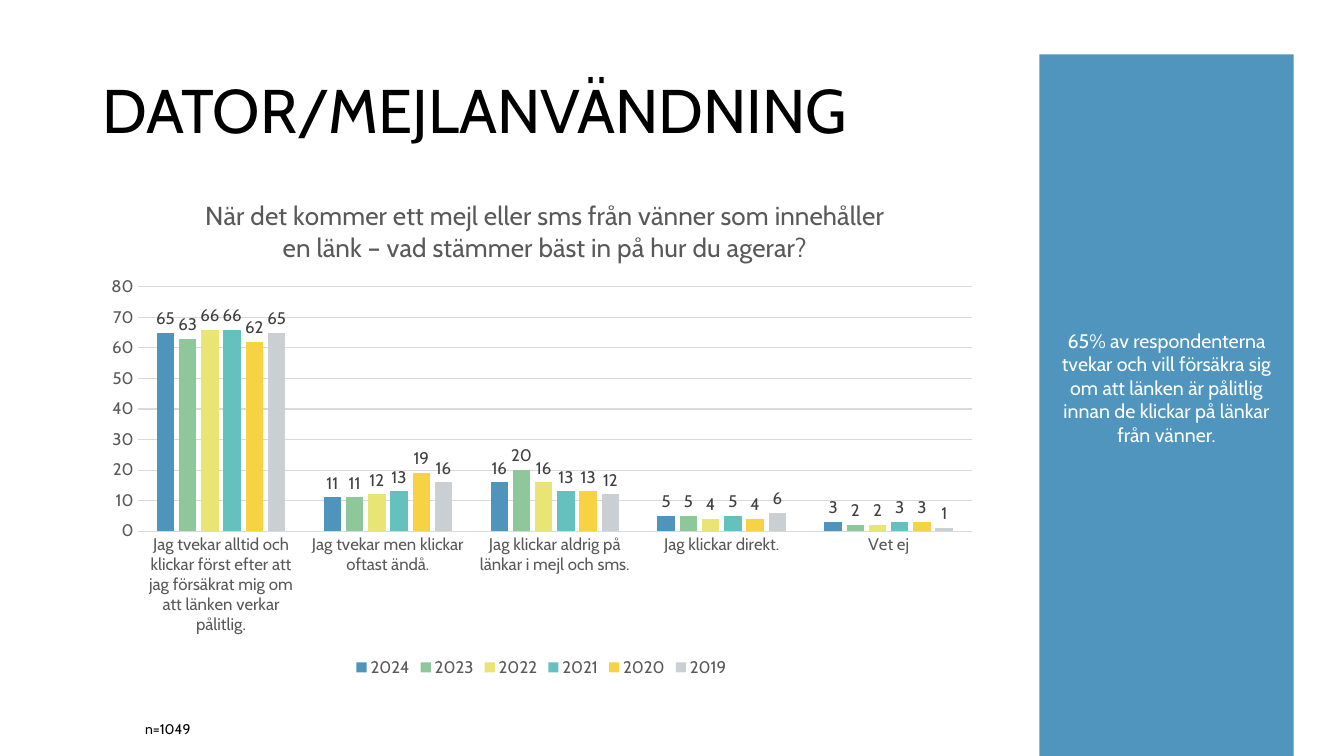
"""Build a slide with a clustered column chart of survey answers and a side panel."""
import dataclasses
import typing

import lxml.etree
import pptx
import pptx.chart.data
import pptx.dml.color
import pptx.enum.chart
import pptx.enum.shapes
import pptx.enum.text
import pptx.oxml.ns
import pptx.util

FONT = "Cabin"
COLORS = {
    "black": "000000",
    "white": "FFFFFF",
    "panel": "4F95BD",
    "axis_text": "595959",
    "label_text": "404040",
    "grid": "D9D9D9",
}
ANCHOR = pptx.enum.text.MSO_ANCHOR
ALIGN = pptx.enum.text.PP_ALIGN


@dataclasses.dataclass(frozen=True)
class SurveyYear:
    name: str
    percentages: tuple[int, ...]
    color: str


QUESTION = (
    "När det kommer ett mejl eller sms från vänner som innehåller "
    "en länk – vad stämmer bäst in på hur du agerar?"
)
ANSWERS = (
    "Jag tvekar alltid och klickar först efter att jag försäkrat mig om att länken verkar pålitlig.",
    "Jag tvekar men klickar oftast ändå.",
    "Jag klickar aldrig på länkar i mejl och sms.",
    "Jag klickar direkt.",
    "Vet ej",
)
SURVEY_YEARS = (
    SurveyYear("2024", (65, 11, 16, 5, 3), "4E94BD"),
    SurveyYear("2023", (63, 11, 20, 5, 2), "8DC79A"),
    SurveyYear("2022", (66, 12, 16, 4, 2), "E8E575"),
    SurveyYear("2021", (66, 13, 13, 5, 3), "65C1BE"),
    SurveyYear("2020", (62, 19, 13, 4, 3), "F7D243"),
    SurveyYear("2019", (65, 16, 12, 6, 1), "CACFD3"),
)


def rgb(hex_color: str) -> pptx.dml.color.RGBColor:
    return pptx.dml.color.RGBColor.from_string(hex_color)


def inches(*lengths: float) -> list[pptx.util.Length]:
    return [pptx.util.Inches(length) for length in lengths]


def style_font(font: typing.Any, size: float, color: str) -> None:
    font.name = FONT
    font.size = pptx.util.Pt(size)
    font.bold = False
    font.color.rgb = rgb(COLORS[color])


def write_text(
    text_frame: typing.Any,
    text: str,
    *,
    size: float,
    color: str = "black",
    align: typing.Any = ALIGN.LEFT,
    anchor: typing.Any = ANCHOR.TOP,
    line_spacing: float = 1.0,
    bottom_margin: float = 0.05,
) -> None:
    text_frame.word_wrap = True
    text_frame.vertical_anchor = anchor
    text_frame.margin_bottom = pptx.util.Inches(bottom_margin)
    paragraph = text_frame.paragraphs[0]
    paragraph.alignment = align
    paragraph.line_spacing = line_spacing
    run = paragraph.add_run()
    run.text = text
    style_font(run.font, size, color)


def set_layout(element: typing.Any, **settings: typing.Any) -> None:
    qualified = pptx.oxml.ns.qn
    layout = element.find(qualified("c:layout"))
    if layout is None:
        layout = lxml.etree.Element(qualified("c:layout"))
        text = element.find(qualified("c:tx"))
        element.insert(0 if text is None else 1, layout)
    manual = lxml.etree.SubElement(layout, qualified("c:manualLayout"))
    for tag, value in settings.items():
        lxml.etree.SubElement(manual, qualified(f"c:{tag}")).set("val", str(value))


def style_grid_line(line: typing.Any) -> None:
    line.color.rgb = rgb(COLORS["grid"])
    line.width = pptx.util.Pt(0.75)


def style_axes(chart: typing.Any) -> None:
    for axis in (chart.category_axis, chart.value_axis):
        axis.major_tick_mark = pptx.enum.chart.XL_TICK_MARK.NONE
        axis.minor_tick_mark = pptx.enum.chart.XL_TICK_MARK.NONE
        style_font(axis.tick_labels.font, 12, "axis_text")
    style_grid_line(chart.category_axis.format.line)
    value_axis = chart.value_axis
    value_axis.minimum_scale = 0
    value_axis.maximum_scale = 80
    value_axis.major_unit = 10
    value_axis.format.line.fill.background()
    style_grid_line(value_axis.major_gridlines.format.line)


def style_series(plot: typing.Any) -> None:
    plot.gap_width = 219
    plot.overlap = -27
    plot.vary_by_categories = False
    for series, year in zip(plot.series, SURVEY_YEARS):
        series.format.fill.solid()
        series.format.fill.fore_color.rgb = rgb(year.color)
        labels = series.data_labels
        labels.show_value = True
        labels.position = pptx.enum.chart.XL_LABEL_POSITION.OUTSIDE_END
        style_font(labels.font, 12, "label_text")


def add_survey_chart(slide: typing.Any) -> None:
    chart_data = pptx.chart.data.CategoryChartData()
    chart_data.categories = ANSWERS
    for year in SURVEY_YEARS:
        chart_data.add_series(year.name, year.percentages)
    chart = slide.shapes.add_chart(
        pptx.enum.chart.XL_CHART_TYPE.COLUMN_CLUSTERED,
        *inches(0.92, 1.71, 8.9, 5.05),
        chart_data,
    ).chart
    style_font(chart.font, 10, "black")
    title = chart.chart_title
    title.include_in_layout = False
    paragraph = title.text_frame.paragraphs[0]
    run = paragraph.add_run()
    run.text = QUESTION
    style_font(run.font, 18.6, "axis_text")
    set_layout(title._element, xMode="edge", yMode="edge", x=0.12, y=0.04)
    style_axes(chart)
    style_series(chart.plots[0])
    set_layout(
        chart._chartSpace.chart.plotArea,
        layoutTarget="inner", xMode="edge", yMode="edge", x=0.05, y=0.225, w=0.93, h=0.48,
    )
    chart.has_legend = True
    chart.legend.position = pptx.enum.chart.XL_LEGEND_POSITION.BOTTOM
    chart.legend.include_in_layout = False
    style_font(chart.legend.font, 12, "axis_text")


def add_side_panel(slide: typing.Any) -> None:
    panel = slide.shapes.add_shape(
        pptx.enum.shapes.MSO_SHAPE.RECTANGLE, *inches(10.31, 0.54, 2.52, 7.08)
    )
    panel.shadow.inherit = False
    panel.fill.solid()
    panel.fill.fore_color.rgb = rgb(COLORS["panel"])
    panel.line.fill.background()
    write_text(
        panel.text_frame,
        "65% av respondenterna tvekar och vill försäkra sig om att länken är pålitlig "
        "innan de klickar på länkar från vänner.",
        size=14, color="white", align=ALIGN.CENTER, anchor=ANCHOR.MIDDLE, bottom_margin=0.52,
    )


def main() -> None:
    presentation = pptx.Presentation()
    presentation.slide_width, presentation.slide_height = inches(13.33, 7.5)
    slide = presentation.slides.add_slide(presentation.slide_layouts[6])
    heading = slide.shapes.add_textbox(*inches(0.92, 0.4, 11.5, 1.45))
    write_text(
        heading.text_frame, "DATOR/MEJLANVÄNDNING",
        size=44, anchor=ANCHOR.MIDDLE, line_spacing=0.9,
    )
    add_survey_chart(slide)
    sample_size = slide.shapes.add_textbox(*inches(1.34, 7.1, 9.9, 0.27))
    write_text(sample_size.text_frame, "n=1049", size=10)
    add_side_panel(slide)
    presentation.save("out.pptx")


if __name__ == "__main__":
    main()
